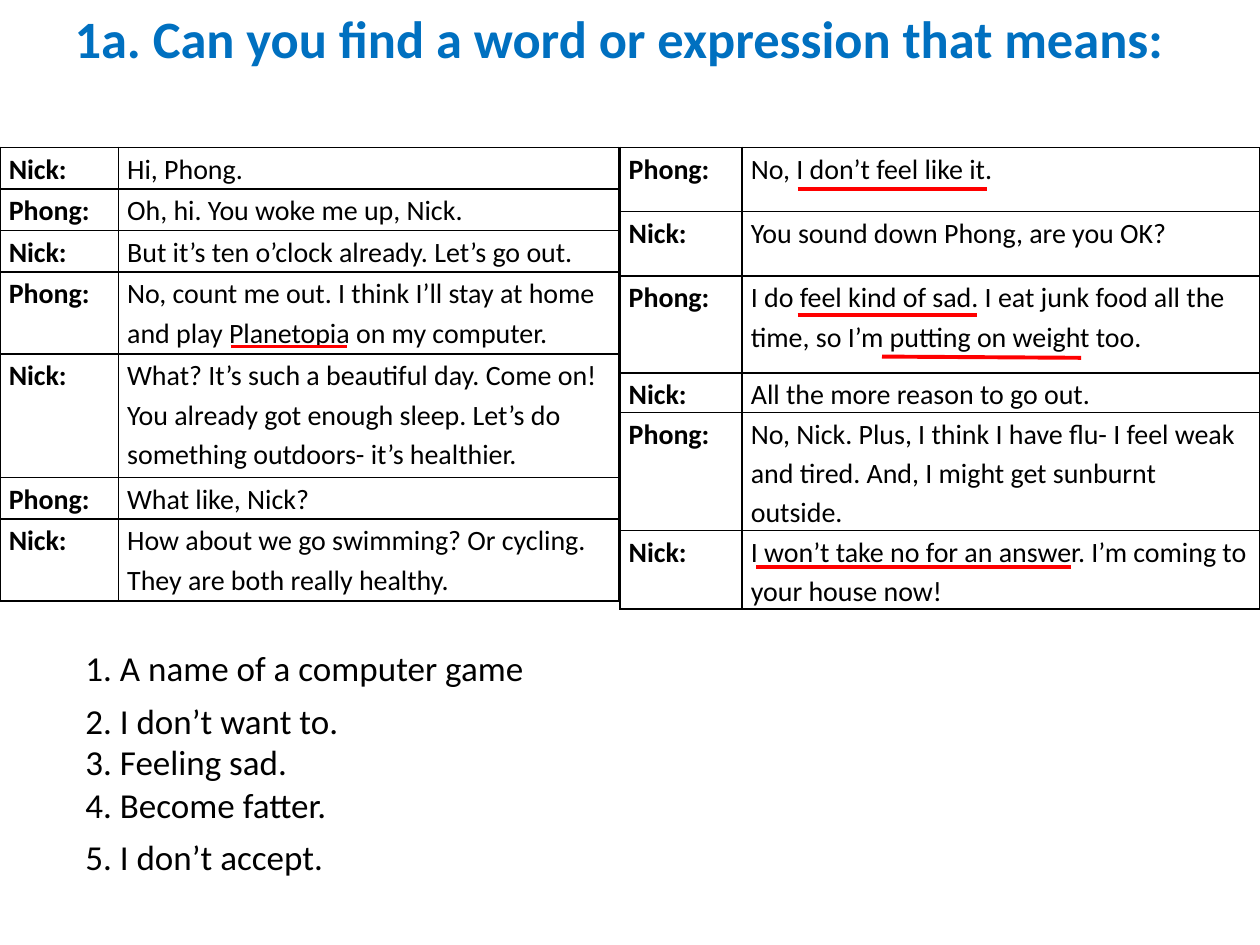
from lxml.etree import SubElement
from pptx import Presentation
from pptx.dml.color import RGBColor
from pptx.enum.shapes import MSO_CONNECTOR as Connector
from pptx.enum.text import MSO_ANCHOR as Anchor, MSO_AUTO_SIZE as AutoSize, PP_ALIGN as Align
from pptx.oxml import parse_xml
from pptx.oxml.ns import nsdecls, qn
from pptx.util import Inches, Pt

TITLE = "1a. Can you find a word or expression that means:"
DIALOGUES = [
    {"left": 0, "columns": (0.94, 3.97), "rows": [
        (0.33, "Nick:", "Hi, Phong."),
        (0.33, "Phong:", "Oh, hi. You woke me up, Nick."),
        (0.33, "Nick:", "But it’s ten o’clock already. Let’s go out."),
        (0.65, "Phong:", "No, count me out. I think I’ll stay at home and play Planetopia on my computer."),
        (0.98, "Nick:", "What? It’s such a beautiful day. Come on! You already got enough sleep. "
                        "Let’s do something outdoors- it’s healthier."),
        (0.33, "Phong:", "What like, Nick?"),
        (0.65, "Nick:", "How about we go swimming? Or cycling. They are both really healthy."),
    ]},
    {"left": 4.92, "columns": (0.97, 4.11), "rows": [
        (0.51, "Phong:", "No, I don’t feel like it."),
        (0.51, "Nick:", "You sound down Phong, are you OK?"),
        (0.77, "Phong:", "I do feel kind of sad. I eat junk food all the time, so I’m putting on weight too."),
        (0.31, "Nick:", "All the more reason to go out."),
        (0.89, "Phong:", "No, Nick. Plus, I think I have flu- I feel weak and tired. "
                         "And, I might get sunburnt outside."),
        (0.59, "Nick:", "I won’t take no for an answer. I’m coming to your house now!"),
    ]},
]
MEANINGS = [
    (5.08, 5.08, "1. A name of a computer game"),
    (5.5, 4.17, "2. I don’t want to."),
    (5.83, 4.17, "3. Feeling sad."),
    (6.17, 4.17, "4. Become fatter."),
    (6.58, 4.17, "5. I don’t accept."),
]
UNDERLINES = [
    (1.83, 2.75, 2.75, 2.75),
    (6.33, 1.5, 7.83, 1.5),
    (6.33, 2.5, 7.75, 2.5),
    (7, 2.83, 8.58, 2.84),
    (6, 4.5, 8.5, 4.5),
]
TABLE_TOP = 1.17


def color(value):
    return RGBColor.from_string(value)


def write(frame, text, size=20, bold=False, ink="000000", align=Align.LEFT, spacing=1.0):
    frame.word_wrap = True
    para = frame.paragraphs[0]
    para.alignment = align
    para.line_spacing = spacing
    span = para.add_run()
    span.text = text
    span.font.name = "Calibri"
    span.font.size = Pt(size)
    span.font.bold = bold
    span.font.color.rgb = color(ink)


def add_borders(cell, ink="000000", width=1):
    properties = cell._tc.get_or_add_tcPr()
    for position, side in enumerate(("lnL", "lnR", "lnT", "lnB")):
        properties.insert(position, parse_xml(
            f'<a:{side} {nsdecls("a")} w="{Pt(width)}"><a:solidFill>'
            f'<a:srgbClr val="{ink}"/></a:solidFill></a:{side}>'))


def add_dialogue(page, left, columns, rows):
    height = sum(row[0] for row in rows)
    table = page.shapes.add_table(
        len(rows), len(columns), Inches(left), Inches(TABLE_TOP),
        Inches(sum(columns)), Inches(height)).table
    table.first_row = table.horz_banding = False
    for column, width in zip(table.columns, columns):
        column.width = Inches(width)
    for index, (row_height, *texts) in enumerate(rows):
        table.rows[index].height = Inches(row_height)
        for number, text in enumerate(texts):
            cell = table.cell(index, number)
            cell.margin_left = cell.margin_right = Inches(0.07)
            cell.margin_top = cell.margin_bottom = 0
            cell.fill.background()
            write(cell.text_frame, text, size=16, bold=number == 0, spacing=1.15)
            add_borders(cell)


def add_meaning(page, top, width, text):
    box = page.shapes.add_textbox(Inches(0.58), Inches(top), Inches(width), Inches(0.44))
    box.text_frame.auto_size = AutoSize.SHAPE_TO_FIT_TEXT
    write(box.text_frame, text)


def add_underline(page, *ends):
    line = page.shapes.add_connector(Connector.STRAIGHT, *map(Inches, ends))
    line.line.color.rgb = color("FF0000")
    line.line.width = Pt(2.25)
    SubElement(line._element.spPr, qn("a:effectLst"))


def main():
    deck = Presentation()
    deck.slide_width, deck.slide_height = Inches(10), Inches(7.5)
    page = deck.slides.add_slide(deck.slide_layouts[5])
    title = page.shapes.title
    title.left, title.top = Inches(0.33), Inches(0)
    title.width, title.height = Inches(9.17), Inches(1.11)
    title.text_frame.vertical_anchor = Anchor.TOP
    title.text_frame.auto_size = AutoSize.NONE
    write(title.text_frame, TITLE, size=30, bold=True, ink="0070C0", align=Align.CENTER)
    for dialogue in DIALOGUES:
        add_dialogue(page, **dialogue)
    for meaning in MEANINGS:
        add_meaning(page, *meaning)
    for ends in UNDERLINES:
        add_underline(page, *ends)
    deck.save("out.pptx")


if __name__ == "__main__":
    main()
